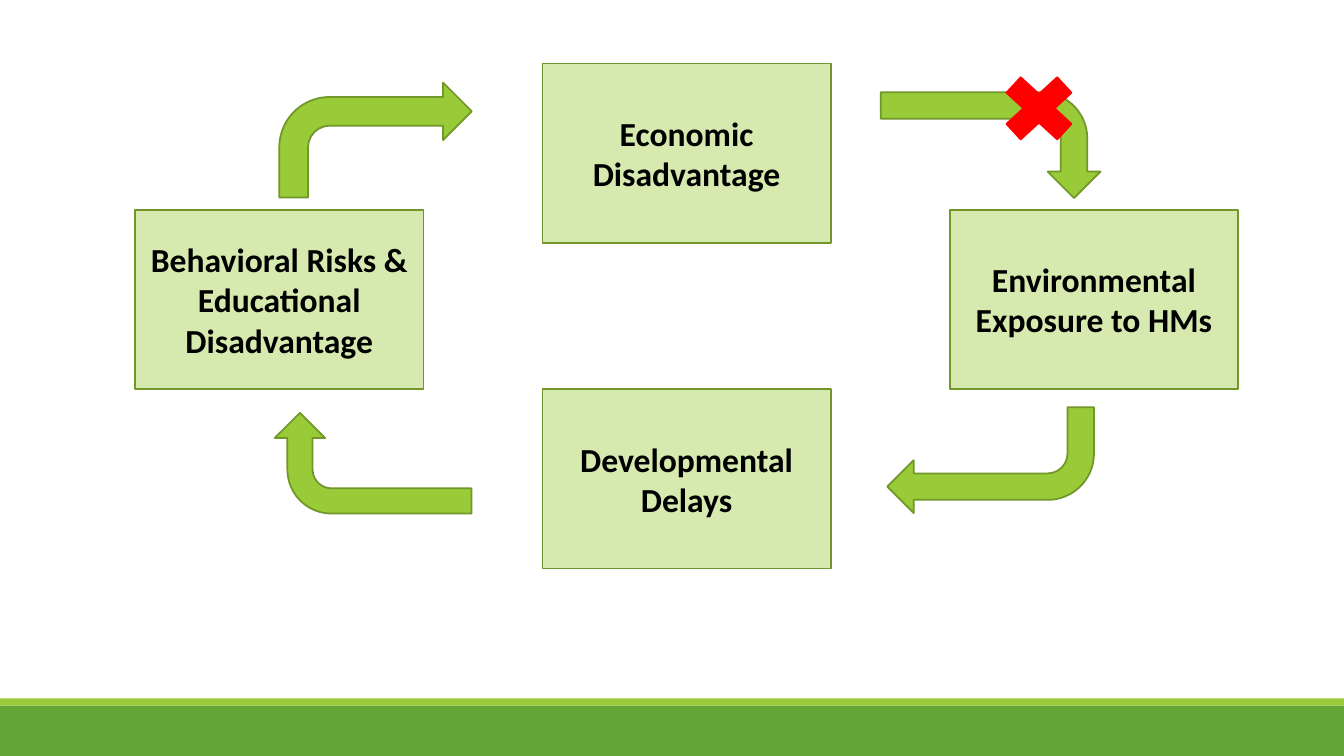
from pptx import Presentation
from pptx.dml.color import RGBColor
from pptx.enum.shapes import MSO_SHAPE
from pptx.enum.text import MSO_ANCHOR, PP_ALIGN
from pptx.util import Inches, Pt

RECT = MSO_SHAPE.RECTANGLE
BENT = MSO_SHAPE.BENT_ARROW
CROSS = MSO_SHAPE.MATH_MULTIPLY
MIDDLE = MSO_ANCHOR.MIDDLE
CENTER = PP_ALIGN.CENTER


def color(code):
    return RGBColor.from_string(code)


class Board:
    """Holds the style and the current slide of the cycle diagram."""

    green, dark, pale, edge, red = "99CB38", "63A537", "D6EAAF", "719629", "FF0000"
    font = {"name": "Calibri", "size": Pt(24), "bold": True}
    size = (2.86, 1.78)

    def __init__(self, slide):
        self.slide = slide

    def shape(self, kind, place, fill, line=None):
        item = self.slide.shapes.add_shape(kind, *map(Inches, place))
        item.shadow.inherit = False
        item.fill.solid()
        item.fill.fore_color.rgb = color(fill)
        if line:
            item.line.color.rgb = color(line)
            item.line.width = Pt(1.25)
        else:
            item.line.fill.background()
        return item

    def band(self, top, height, fill):
        self.shape(RECT, (0, top, 13.33, height), fill)

    def box(self, left, top, text):
        frame = self.shape(RECT, (left, top, *self.size), self.pale, self.edge).text_frame
        frame.word_wrap = True
        frame.vertical_anchor = MIDDLE
        para = frame.paragraphs[0]
        para.text = text
        para.alignment = CENTER
        for name, value in self.font.items():
            setattr(para.font, name, value)
        para.font.color.rgb = color("000000")

    def arrow(self, place, turn):
        self.shape(BENT, place, self.green, self.edge).rotation = turn

    def cross(self, place):
        self.shape(CROSS, place, self.red, self.red)


def main():
    deck = Presentation()
    deck.slide_width, deck.slide_height = Inches(13.33), Inches(7.5)
    board = Board(deck.slides.add_slide(deck.slide_layouts[6]))

    board.band(7, 0.5, board.dark)
    board.band(6.93, 0.07, board.green)

    west, mid, east = (1.34 + 4.04 * i for i in range(3))
    for left, top, text in (
        (east, 2.08, "Environmental Exposure to HMs"),
        (west, 2.08, "Behavioral Risks & Educational Disadvantage"),
        (mid, 3.86, "Developmental Delays"),
        (mid, 0.63, "Economic Disadvantage"),
    ):
        board.box(left, top, text)

    for place, turn in (
        ((8.8, 4.04, 2.05, 1.05), 180),
        ((3.2, 3.62, 1, 1.95), 270),
        ((2.77, 0.82, 1.91, 1.14), 0),
        ((9.3, 0.35, 1.05, 2.18), 90),
    ):
        board.arrow(place, turn)
    board.cross((9.82, 0.63, 0.97, 0.89))

    deck.save("out.pptx")


if __name__ == "__main__":
    main()
